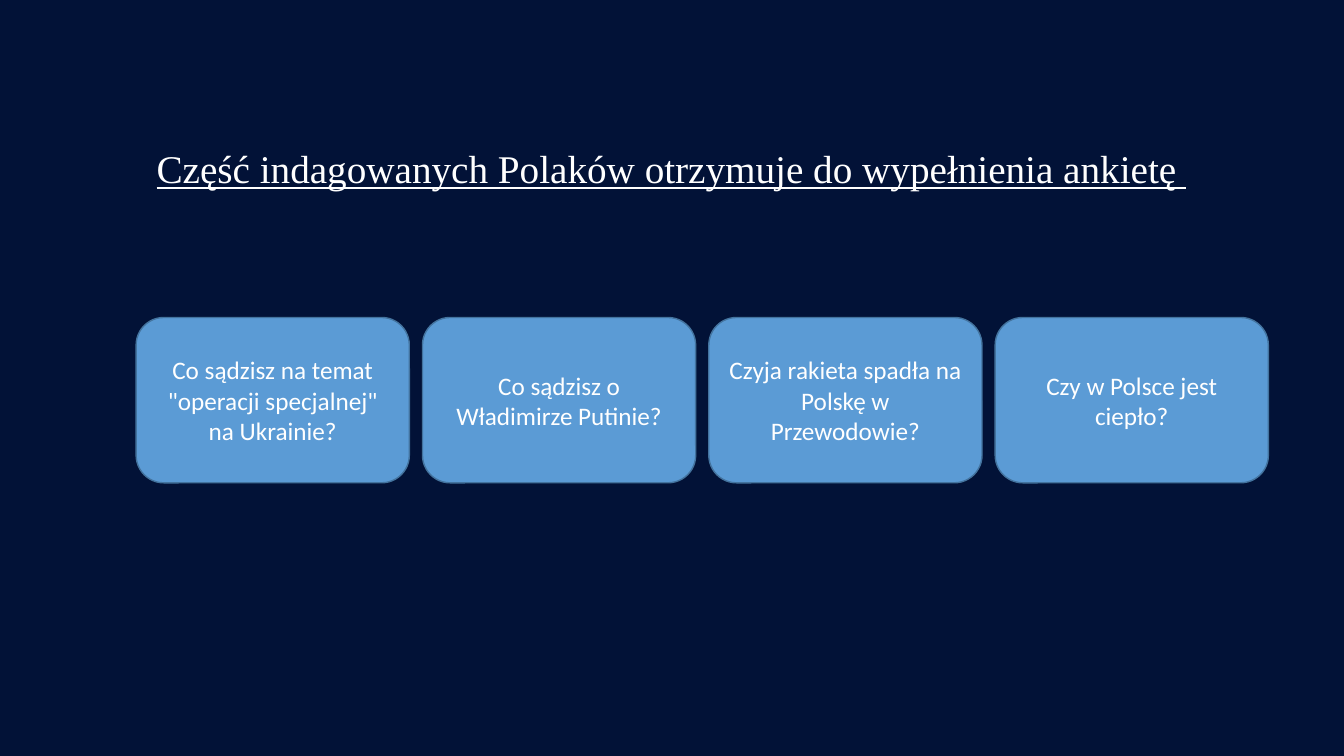
from pptx import Presentation
from pptx.dml.color import RGBColor
from pptx.enum.shapes import MSO_SHAPE
from pptx.enum.text import MSO_ANCHOR, PP_ALIGN
from pptx.util import Inches, Pt

NAVY = RGBColor(0x02, 0x12, 0x37)
BLUE = RGBColor(0x5B, 0x9B, 0xD5)
OUTLINE = RGBColor(0x43, 0x73, 0x9E)
WHITE = RGBColor(0xFF, 0xFF, 0xFF)

HEADING = "Część indagowanych Polaków otrzymuje do wypełnienia ankietę "
QUESTIONS = [
    'Co sądzisz na temat "operacji specjalnej" na Ukrainie?',
    "Co sądzisz o Władimirze Putinie?",
    "Czyja rakieta spadła na Polskę w Przewodowie?",
    "Czy w Polsce jest ciepło?",
]
CARD_LEFT, CARD_TOP = 1.35, 3.15
CARD_WIDTH, CARD_HEIGHT = 2.71, 1.64
CARD_STEP = 2.84


def write_text(frame, text, *, size, font="Calibri", underline=None, spacing=None):
    frame.word_wrap = True
    frame.vertical_anchor = MSO_ANCHOR.MIDDLE
    paragraph = frame.paragraphs[0]
    paragraph.alignment = PP_ALIGN.CENTER
    paragraph.line_spacing = spacing
    run = paragraph.add_run()
    run.text = text
    run.font.name = font
    run.font.size = Pt(size)
    run.font.underline = underline
    run.font.color.rgb = WHITE


def add_heading(slide, text):
    heading = slide.shapes.add_textbox(
        Inches(0.91), Inches(0.97), Inches(11.5), Inches(1.45)
    )
    write_text(heading.text_frame, text, size=28, font="Times New Roman",
               underline=True, spacing=0.9)


def add_question(slide, left, text):
    card = slide.shapes.add_shape(
        MSO_SHAPE.ROUNDED_RECTANGLE, Inches(left), Inches(CARD_TOP),
        Inches(CARD_WIDTH), Inches(CARD_HEIGHT),
    )
    card.shadow.inherit = False
    card.fill.solid()
    card.fill.fore_color.rgb = BLUE
    card.line.color.rgb = OUTLINE
    card.line.width = Pt(1)
    write_text(card.text_frame, text, size=18)


def main():
    deck = Presentation()
    deck.slide_width, deck.slide_height = Inches(13.33), Inches(7.5)
    slide = deck.slides.add_slide(deck.slide_layouts[6])
    slide.background.fill.solid()
    slide.background.fill.fore_color.rgb = NAVY
    add_heading(slide, HEADING)
    for index, question in enumerate(QUESTIONS):
        add_question(slide, CARD_LEFT + index * CARD_STEP, question)
    deck.save("out.pptx")


if __name__ == "__main__":
    main()
